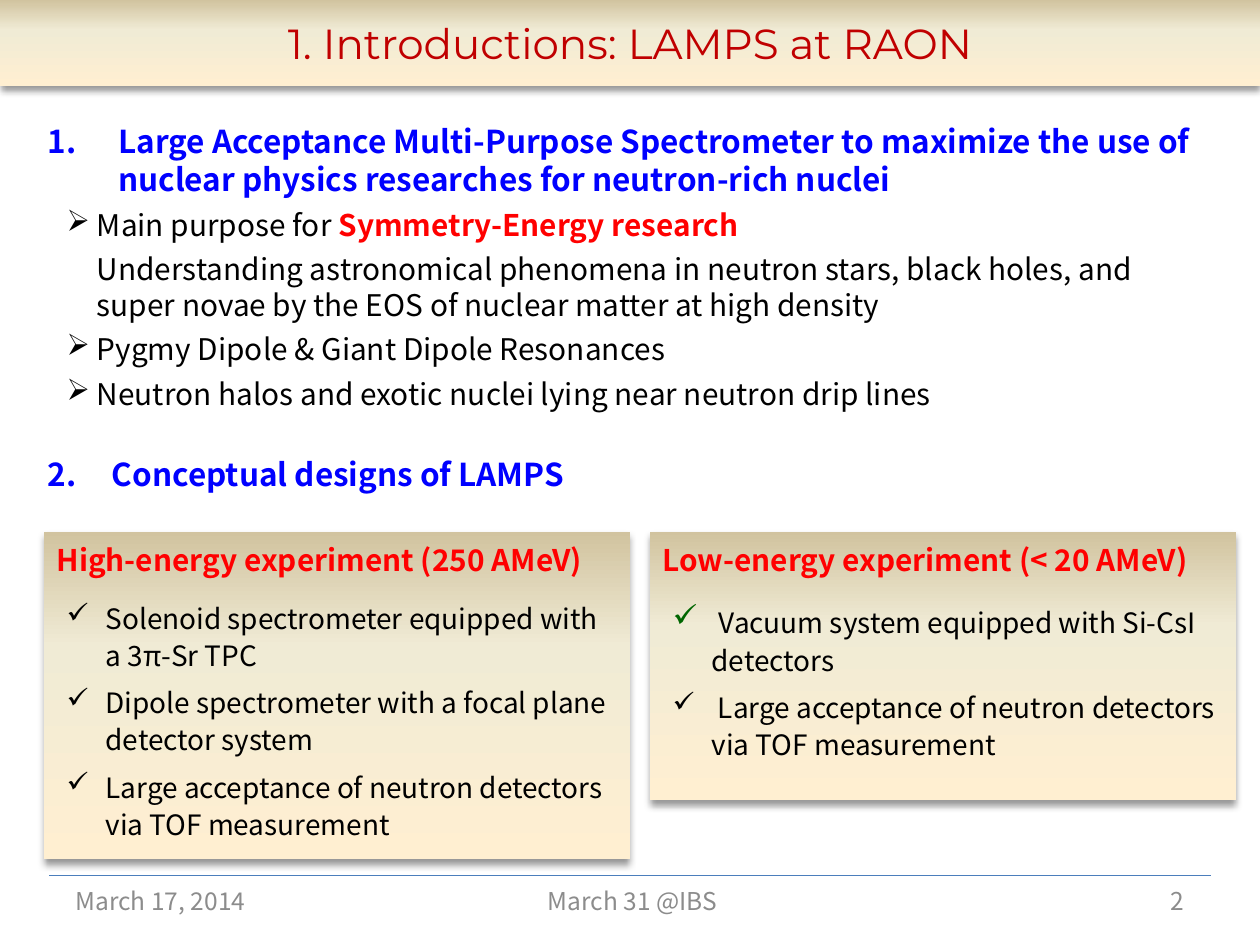
from dataclasses import dataclass

from lxml.etree import SubElement
from pptx import Presentation
from pptx.dml.color import RGBColor
from pptx.enum.shapes import MSO_CONNECTOR, MSO_SHAPE
from pptx.enum.text import MSO_ANCHOR, PP_ALIGN
from pptx.oxml import parse_xml
from pptx.oxml.ns import nsdecls, qn
from pptx.util import Inches, Pt


@dataclass(frozen=True)
class Theme:
    title_font: str = "Montserrat"
    body_font: str = "Noto Sans CJK KR"
    title: str = "C00000"
    heading: str = "0000FF"
    accent: str = "FF0000"
    text: str = "000000"
    green: str = "006600"
    footer: str = "8C8C8C"
    rule: str = "4B7EBC"
    panel_stops: tuple = ((0, "FFEFD1"), (65, "F0EBD5"), (100, "D1C39F"))
    title_size: int = 24
    heading_size: int = 18
    point_size: int = 17
    item_size: int = 16
    footer_size: int = 14


THEME = Theme()

# Content
TITLE = "1. Introductions: LAMPS at RAON"

# Style name, then runs: (text, colour or None, bold or None, size or None)
def plain(text):
    return [(text, None, None, None)]


OUTLINE = [
    ("first heading", plain("Large Acceptance Multi-Purpose Spectrometer to maximize the use of "
                            "nuclear physics researches for neutron-rich nuclei")),
    ("point", plain("Main purpose for ")
     + [("Symmetry-Energy research", THEME.accent, True, None)]),
    ("detail", plain("Understanding astronomical phenomena in neutron stars, black holes, and "
                     "super novae by the EOS of nuclear matter at high density")),
    ("point", plain("Pygmy Dipole & Giant Dipole Resonances")),
    ("point", plain("Neutron halos and exotic nuclei lying near neutron drip lines")),
    ("second heading", plain("Conceptual designs of LAMPS")),
]

PANELS = [  # height, paragraphs
    (2.60, [
        ("panel heading", plain("High-energy experiment (250 AMeV)")),
        ("item", plain("Solenoid spectrometer equipped with a 3π-Sr TPC")),
        ("item", plain("Dipole spectrometer with a focal plane detector system")),
        ("item", plain("Large acceptance of neutron detectors via TOF measurement")),
    ]),
    (2.13, [
        ("panel heading", plain("Low-energy experiment (< 20 AMeV)")),
        ("item", [(" ", THEME.green, None, THEME.heading_size)]
         + plain("Vacuum system equipped with Si-CsI detectors")),
        ("item", plain(" Large acceptance of neutron detectors via TOF measurement")),
    ]),
]

FOOTERS = [  # text, left, width, alignment
    ("March 17, 2014", 0.50, 2.33, PP_ALIGN.LEFT),
    ("March 31 @IBS", 3.40, 3.24, PP_ALIGN.CENTER),
    ("2", 7.17, 2.33, PP_ALIGN.RIGHT),
]

# Paragraph styles
HEADING = dict(size=THEME.heading_size, color=THEME.heading, bold=True, after=5)
POINT = dict(size=THEME.point_size, color=THEME.text, margin=0.39, after=5)
STYLES = {
    "title": dict(size=THEME.title_size, color=THEME.title, font=THEME.title_font),
    "first heading": dict(HEADING, margin=0.56, hang=0.56, number=1),
    "second heading": dict(HEADING, margin=0.51, hang=0.51, number=2, before=20),
    "point": dict(POINT, hang=0.24, bullet="➢"),
    "detail": POINT,
    "panel heading": dict(size=THEME.point_size, color=THEME.accent, bold=True,
                          spacing=1.1, after=12),
    "item": dict(size=THEME.item_size, color=THEME.text, margin=0.39, hang=0.31,
                 bullet="✓", spacing=1.1, after=6),
    "footer": dict(size=THEME.footer_size, color=THEME.footer),
}

# Layout, in inches
PANEL_LEFT, PANEL_TOP, PANEL_WIDTH, PANEL_GAP = 0.35, 4.22, 4.65, 0.16
FOOTER_TOP, FOOTER_HEIGHT = 6.95, 0.4
RULE_MARGIN = 0.39


def style_paragraph(paragraph, size, color, font=THEME.body_font, bold=False, margin=0,
                    hang=0, bullet=None, number=None, spacing=1.0, before=0, after=0):
    paragraph.line_spacing = spacing
    paragraph.space_before, paragraph.space_after = Pt(before), Pt(after)
    properties = paragraph._p.get_or_add_pPr()
    properties.set("marL", str(Inches(margin)))
    properties.set("indent", str(-Inches(hang)))
    if bullet:
        SubElement(properties, qn("a:buChar"), char=bullet)
    elif number:
        SubElement(properties, qn("a:buAutoNum"), type="arabicPeriod", startAt=str(number))
    else:
        SubElement(properties, qn("a:buNone"))
    paragraph.font.name, paragraph.font.size, paragraph.font.bold = font, Pt(size), bold
    paragraph.font.color.rgb = RGBColor.from_string(color)


def write(shape, paragraphs, alignment=PP_ALIGN.LEFT, anchor=MSO_ANCHOR.TOP):
    frame = shape.text_frame
    frame.word_wrap, frame.vertical_anchor = True, anchor
    for index, (style, runs) in enumerate(paragraphs):
        paragraph = frame.add_paragraph() if index else frame.paragraphs[0]
        paragraph.alignment = alignment
        style_paragraph(paragraph, **STYLES[style])
        for text, color, bold, size in runs:
            run = paragraph.add_run()
            run.text = text
            if color:
                run.font.color.rgb = RGBColor.from_string(color)
            if bold is not None:
                run.font.bold = bold
            if size:
                run.font.size = Pt(size)


def add_text(slide, left, top, width, height, paragraphs, **options):
    box = slide.shapes.add_textbox(*map(Inches, (left, top, width, height)))
    write(box, paragraphs, **options)


def add_panel(slide, left, top, width, height, paragraphs, **options):
    panel = slide.shapes.add_shape(MSO_SHAPE.RECTANGLE,
                                   *map(Inches, (left, top, width, height)))
    panel.line.fill.background()
    stops = "".join(f'<a:gs pos="{position * 1000}"><a:srgbClr val="{color}"/></a:gs>'
                    for position, color in THEME.panel_stops)
    properties = panel._element.spPr
    properties.find(qn("a:ln")).addprevious(parse_xml(
        f'<a:gradFill {nsdecls("a")} rotWithShape="1"><a:gsLst>{stops}</a:gsLst>'
        '<a:lin ang="16200000" scaled="0"/></a:gradFill>'))
    properties.append(parse_xml(
        f'<a:effectLst {nsdecls("a")}><a:outerShdw blurRad="{Pt(4)}" dist="{Pt(3)}" '
        'dir="5400000" rotWithShape="0"><a:srgbClr val="000000"><a:alpha val="40000"/>'
        '</a:srgbClr></a:outerShdw></a:effectLst>'))
    write(panel, paragraphs, **options)


def main():
    presentation = Presentation()
    presentation.slide_width, presentation.slide_height = Inches(10), Inches(7.5)
    slide = presentation.slides.add_slide(presentation.slide_layouts[6])

    # Footer rule
    rule = slide.shapes.add_connector(
        MSO_CONNECTOR.STRAIGHT, Inches(RULE_MARGIN), Inches(FOOTER_TOP),
        Inches(10 - RULE_MARGIN), Inches(FOOTER_TOP))
    rule.line.color.rgb = RGBColor.from_string(THEME.rule)
    rule.line.width = Pt(0.75)
    SubElement(rule._element.spPr, qn("a:effectLst"))

    # Title band and outline
    add_panel(slide, 0, 0, 10, 0.68, [("title", plain(TITLE))],
              alignment=PP_ALIGN.CENTER, anchor=MSO_ANCHOR.MIDDLE)
    add_text(slide, 0.28, 0.92, 9.45, 2.76, OUTLINE)

    # Experiment panels
    for column, (height, paragraphs) in enumerate(PANELS):
        left = PANEL_LEFT + column * (PANEL_WIDTH + PANEL_GAP)
        add_panel(slide, left, PANEL_TOP, PANEL_WIDTH, height, paragraphs)

    # Footer
    for text, left, width, alignment in FOOTERS:
        add_text(slide, left, FOOTER_TOP, width, FOOTER_HEIGHT, [("footer", plain(text))],
                 alignment=alignment, anchor=MSO_ANCHOR.MIDDLE)

    presentation.save("out.pptx")


if __name__ == "__main__":
    main()
